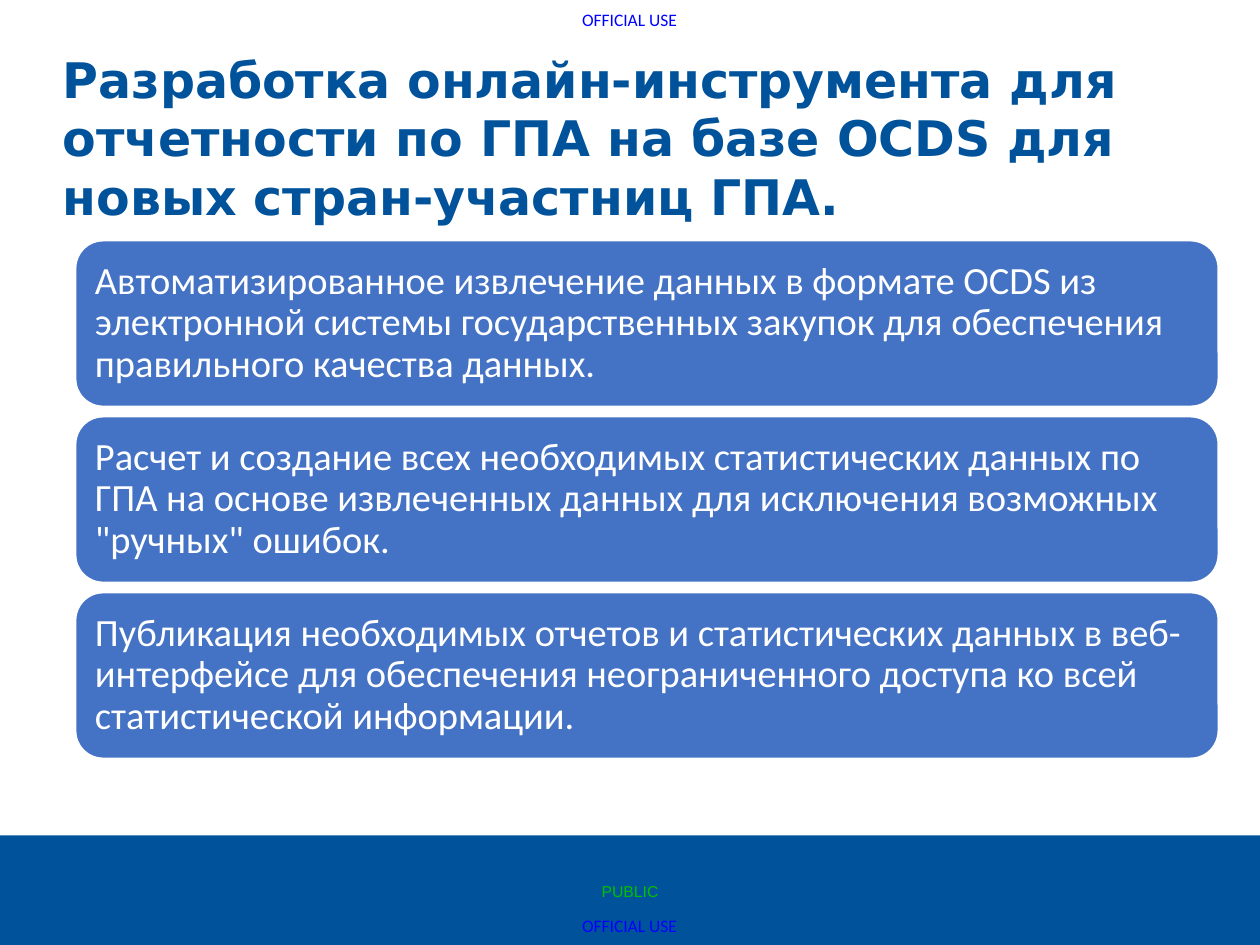
from pptx import Presentation
from pptx import util as u
from pptx.dml.color import RGBColor
from pptx.enum import shapes, text

NAVY = RGBColor(0x00, 0x53, 0x9B)
CARD_BLUE = RGBColor(0x44, 0x72, 0xC4)
WHITE = RGBColor(0xFF, 0xFF, 0xFF)
MARK_BLUE = RGBColor(0x00, 0x00, 0xFF)
MARK_GREEN = RGBColor(0x00, 0xC0, 0x00)

WIDTH, HEIGHT = 10, 7.5
TITLE = ("Разработка онлайн-инструмента для отчетности по ГПА на базе OCDS "
         "для новых стран-участниц ГПА.")
CARDS = [
    "Автоматизированное извлечение данных в формате OCDS из электронной системы "
    "государственных закупок для обеспечения правильного качества данных.",
    "Расчет и создание всех необходимых статистических данных по ГПА на основе "
    "извлеченных данных для исключения возможных \"ручных\" ошибок.",
    "Публикация необходимых отчетов и статистических данных в веб-интерфейсе для "
    "обеспечения неограниченного доступа ко всей статистической информации.",
]


def inches(box):
    return [u.Inches(v) for v in box]


def write(sp, words, size, font, color, bold=False, align=text.PP_ALIGN.LEFT,
          insets=(0.1, 0.05)):
    """Fill a shape with one styled paragraph and return that paragraph."""
    tf = sp.text_frame
    tf.word_wrap = True
    tf.margin_left = tf.margin_right = u.Inches(insets[0])
    tf.margin_top = tf.margin_bottom = u.Inches(insets[1])
    p = tf.paragraphs[0]
    p.alignment = align
    r = p.add_run()
    r.text = words
    r.font.size = u.Pt(size)
    r.font.name = font
    r.font.bold = bold
    r.font.color.rgb = color
    return p


def add_block(s, kind, box, fill):
    sp = s.shapes.add_shape(kind, *inches(box))
    sp.shadow.inherit = False
    sp.fill.solid()
    sp.fill.fore_color.rgb = fill
    return sp


def add_footer(s, box):
    """Solid band with the public marking centred in it."""
    x, y, w, h = box
    band = add_block(s, shapes.MSO_SHAPE.RECTANGLE, box, NAVY)
    band.line.fill.background()
    label = s.shapes.add_textbox(*inches((x, y + 0.37 * h, w, 0.46 * h)))
    write(label, "PUBLIC", 9, "Arial", MARK_GREEN, align=text.PP_ALIGN.CENTER)


def add_marking(s, box):
    label = s.shapes.add_textbox(*inches(box))
    write(label, "OFFICIAL USE", 10, "Calibri", MARK_BLUE, insets=(0, 0))
    label.text_frame.word_wrap = False


def add_title(s, box):
    title = s.shapes.add_textbox(*inches(box))
    write(title, TITLE, 28, "DejaVu Sans", NAVY, bold=True)


def add_cards(s, box, gap=0.08):
    """Stack equal rounded cards down the box."""
    x, y, w, h = box
    card_h = (h - gap * (len(CARDS) - 1)) / len(CARDS)
    for i, words in enumerate(CARDS):
        card = add_block(s, shapes.MSO_SHAPE.ROUNDED_RECTANGLE,
                         (x, y + i * (card_h + gap), w, card_h), CARD_BLUE)
        card.line.color.rgb = WHITE
        card.line.width = u.Pt(1)
        card.text_frame.vertical_anchor = text.MSO_ANCHOR.MIDDLE
        p = write(card, words, 22, "Calibri", WHITE, insets=(0.09, 0.09))
        p.line_spacing = 0.9


def main():
    prs = Presentation()
    prs.slide_width, prs.slide_height = inches((WIDTH, HEIGHT))
    s = prs.slides.add_slide(prs.slide_layouts[6])

    # Footer band and the markings at top and bottom
    add_footer(s, (0, 6.63, WIDTH, HEIGHT - 6.63))
    for top in (0.07, 7.26):
        add_marking(s, (4.62, top, 0.79, 0.17))

    # Title and the three cards
    add_title(s, (0.4, 0.34, 9.27, 1.51))
    add_cards(s, (0.6, 1.91, 9.07, 4.11))

    prs.save("out.pptx")


if __name__ == "__main__":
    main()
